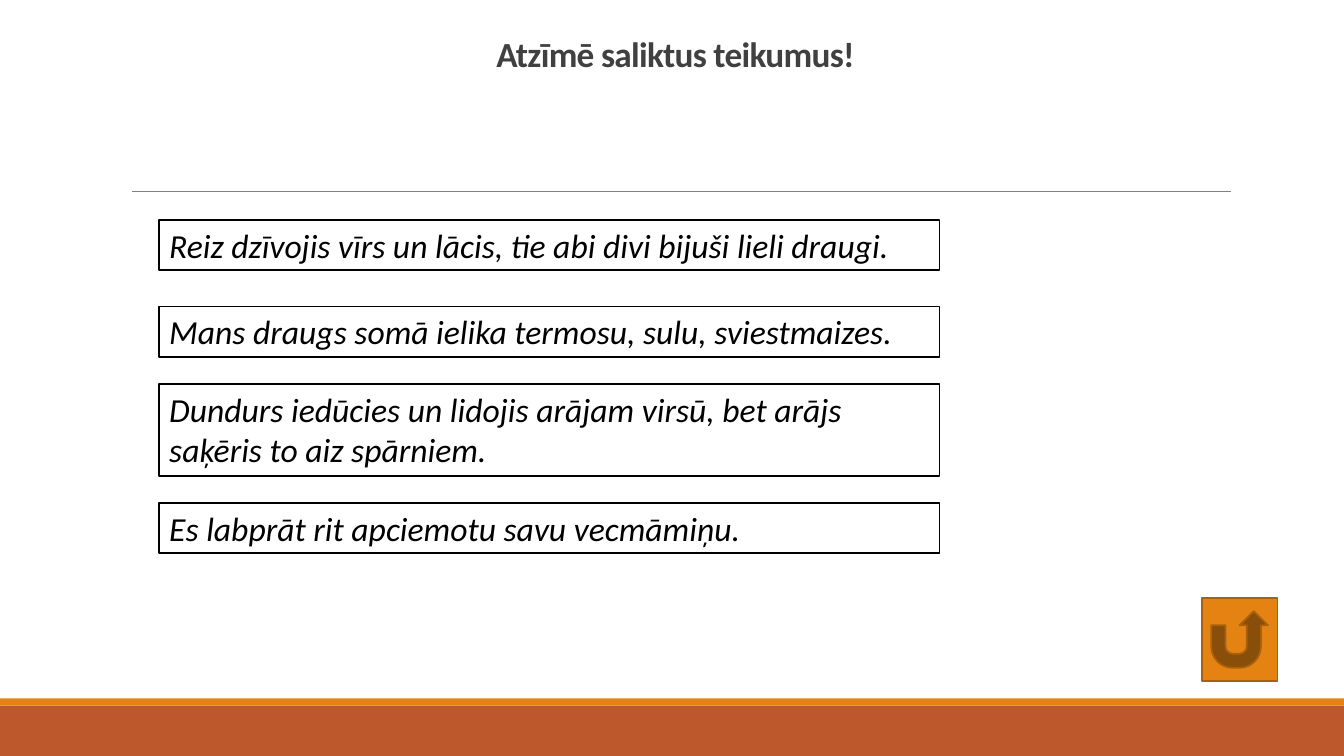
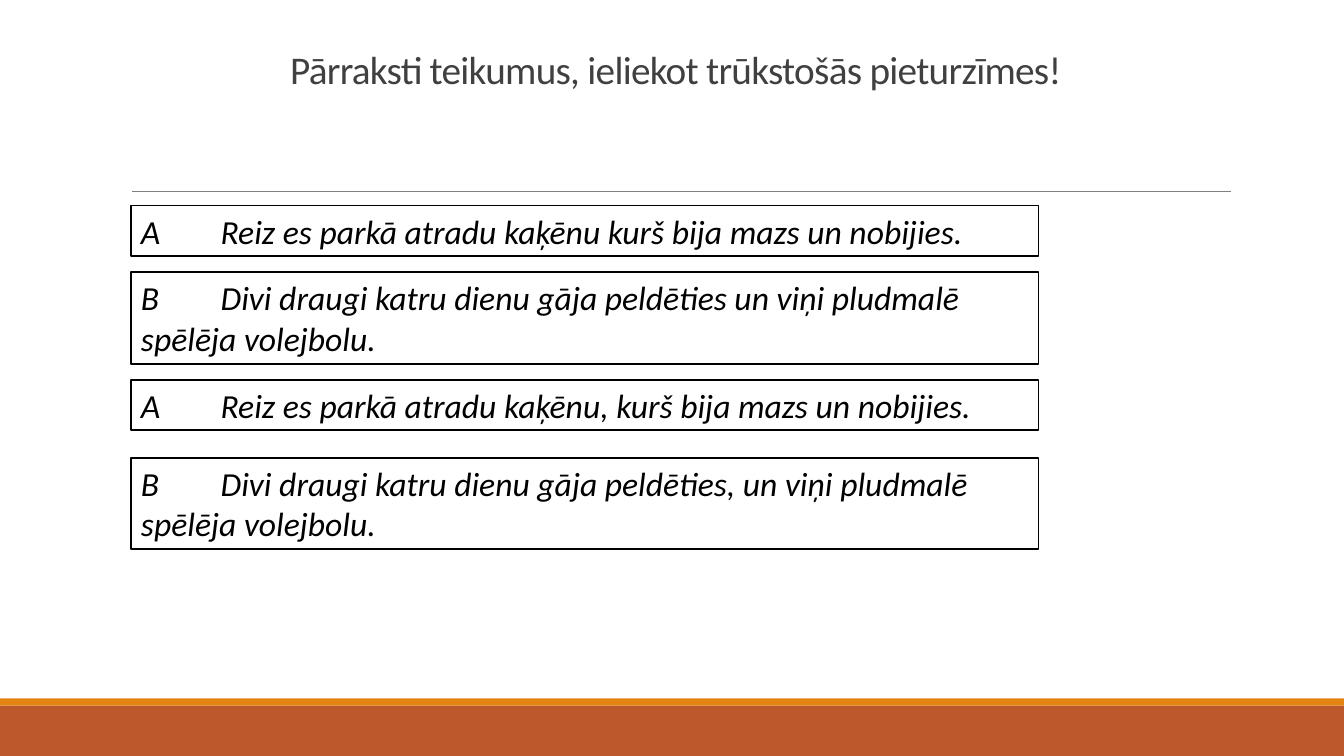
"""Build two Latvian grammar exercise slides on compound sentences."""
import pptx
import pptx.dml.color
import pptx.enum.shapes
import pptx.enum.text
import pptx.oxml.xmlchemy
import pptx.util

WIDTH, HEIGHT = 13.33, 7.5
FONT = "Calibri"
COLOURS = {"band": "BD582C", "accent": "E48312", "accent_edge": "A9610D",
           "rule": "808080", "title": "404040", "text": "000000", "paper": "FFFFFF"}
BANDS = [(7, 0.5, "band"), (6.93, 0.07, "accent")]
RULE_Y, RULE_LEFT, RULE_RIGHT = 1.9, 1.31, 12.21
TITLE_LEFT, TITLE_TOP, TITLE_WIDTH = 1.2, 0.31, 11
LINE_HEIGHT, BOX_PADDING, LETTER_TAB = 0.41, 0.09, 0.79
RETURN_BUTTON = (11.92, 5.93, 0.75, 0.83)
SENTENCE_FORMAT = {"name": FONT, "size": pptx.util.Pt(24), "italic": True}

EXERCISES = [
    {
        "title": "Atzīmē saliktus teikumus!",
        "title_height": 0.48,
        "title_format": {"name": FONT, "size": pptx.util.Pt(25.2), "bold": True},
        "left": 1.58, "width": 7.74, "return": True,
        "sentences": [
            (2.18, 1, "Reiz dzīvojis vīrs un lācis, tie abi divi bijuši lieli draugi."),
            (3.04, 1, "Mans draugs somā ielika termosu, sulu, sviestmaizes."),
            (3.81, 2, "Dundurs iedūcies un lidojis arājam virsū, bet arājs saķēris to aiz spārniem."),
            (4.99, 1, "Es labprāt rit apciemotu savu vecmāmiņu."),
        ],
    },
    {
        "title": "Pārraksti teikumus, ieliekot trūkstošās pieturzīmes!",
        "title_height": 0.66,
        "title_format": {"name": FONT, "size": pptx.util.Pt(28), "bold": False},
        "left": 1.3, "width": 9, "return": False,
        "sentences": [
            (2.04, 1, "A\tReiz es parkā atradu kaķēnu kurš bija mazs un nobijies."),
            (2.7, 2, "B\tDivi draugi katru dienu gāja peldēties un viņi pludmalē spēlēja volejbolu."),
            (3.77, 1, "A\tReiz es parkā atradu kaķēnu, kurš bija mazs un nobijies."),
            (4.54, 2, "B\tDivi draugi katru dienu gāja peldēties, un viņi pludmalē spēlēja volejbolu."),
        ],
    },
]


def colour(role):
    return pptx.dml.color.RGBColor.from_string(COLOURS[role])


def inches(*lengths):
    return [pptx.util.Inches(length) for length in lengths]


def add_block(slide, place, fill, edge=None, kind="RECTANGLE"):
    block = slide.shapes.add_shape(
        getattr(pptx.enum.shapes.MSO_SHAPE, kind), *inches(*place))
    block.shadow.inherit = False
    block.fill.solid()
    block.fill.fore_color.rgb = colour(fill)
    if edge:
        block.line.color.rgb = colour(edge)
        block.line.width = pptx.util.Pt(1.25)
    else:
        block.line.fill.background()
    return block


def write(frame, text, ink, font_format, align, anchor):
    frame.word_wrap = True
    frame.vertical_anchor = anchor
    paragraph = frame.paragraphs[0]
    paragraph.alignment = align
    run = paragraph.add_run()
    run.text = text
    run.font.color.rgb = colour(ink)
    for attribute, value in font_format.items():
        setattr(run.font, attribute, value)
    return paragraph, run


def add_frame(slide):
    for top, height, fill in BANDS:
        add_block(slide, (0, top, WIDTH, height), fill)
    rule = slide.shapes.add_connector(
        pptx.enum.shapes.MSO_CONNECTOR.STRAIGHT,
        *inches(RULE_LEFT, RULE_Y, RULE_RIGHT, RULE_Y))
    rule.line.color.rgb = colour("rule")
    rule.line.width = pptx.util.Pt(0.5)
    rule._element.spPr.append(pptx.oxml.xmlchemy.OxmlElement("a:effectLst"))


def add_title(slide, exercise):
    title = slide.shapes.add_textbox(
        *inches(TITLE_LEFT, TITLE_TOP, TITLE_WIDTH, exercise["title_height"]))
    paragraph, run = write(
        title.text_frame, exercise["title"], "title", exercise["title_format"],
        pptx.enum.text.PP_ALIGN.CENTER, pptx.enum.text.MSO_ANCHOR.BOTTOM)
    paragraph.line_spacing = 0.85
    run._r.get_or_add_rPr().set("spc", "-50")


def add_sentence(slide, place, sentence):
    box = add_block(slide, place, "paper", "text")
    paragraph, _ = write(
        box.text_frame, sentence, "text", SENTENCE_FORMAT,
        pptx.enum.text.PP_ALIGN.LEFT, pptx.enum.text.MSO_ANCHOR.TOP)
    box.text_frame.auto_size = pptx.enum.text.MSO_AUTO_SIZE.SHAPE_TO_FIT_TEXT
    if "\t" in sentence:
        stops = pptx.oxml.xmlchemy.OxmlElement("a:tabLst")
        stop = pptx.oxml.xmlchemy.OxmlElement("a:tab")
        stop.set("pos", str(pptx.util.Inches(LETTER_TAB)))
        stop.set("algn", "l")
        stops.append(stop)
        paragraph._p.get_or_add_pPr().append(stops)


def main():
    deck = pptx.Presentation()
    deck.slide_width, deck.slide_height = inches(WIDTH, HEIGHT)
    for exercise in EXERCISES:
        slide = deck.slides.add_slide(deck.slide_layouts[6])
        add_frame(slide)
        add_title(slide, exercise)
        for top, lines, sentence in exercise["sentences"]:
            height = BOX_PADDING + LINE_HEIGHT * lines
            add_sentence(slide, (exercise["left"], top, exercise["width"], height), sentence)
        if exercise["return"]:
            add_block(slide, RETURN_BUTTON, "accent", "accent_edge", "ACTION_BUTTON_RETURN")
    deck.save("out.pptx")


if __name__ == "__main__":
    main()
